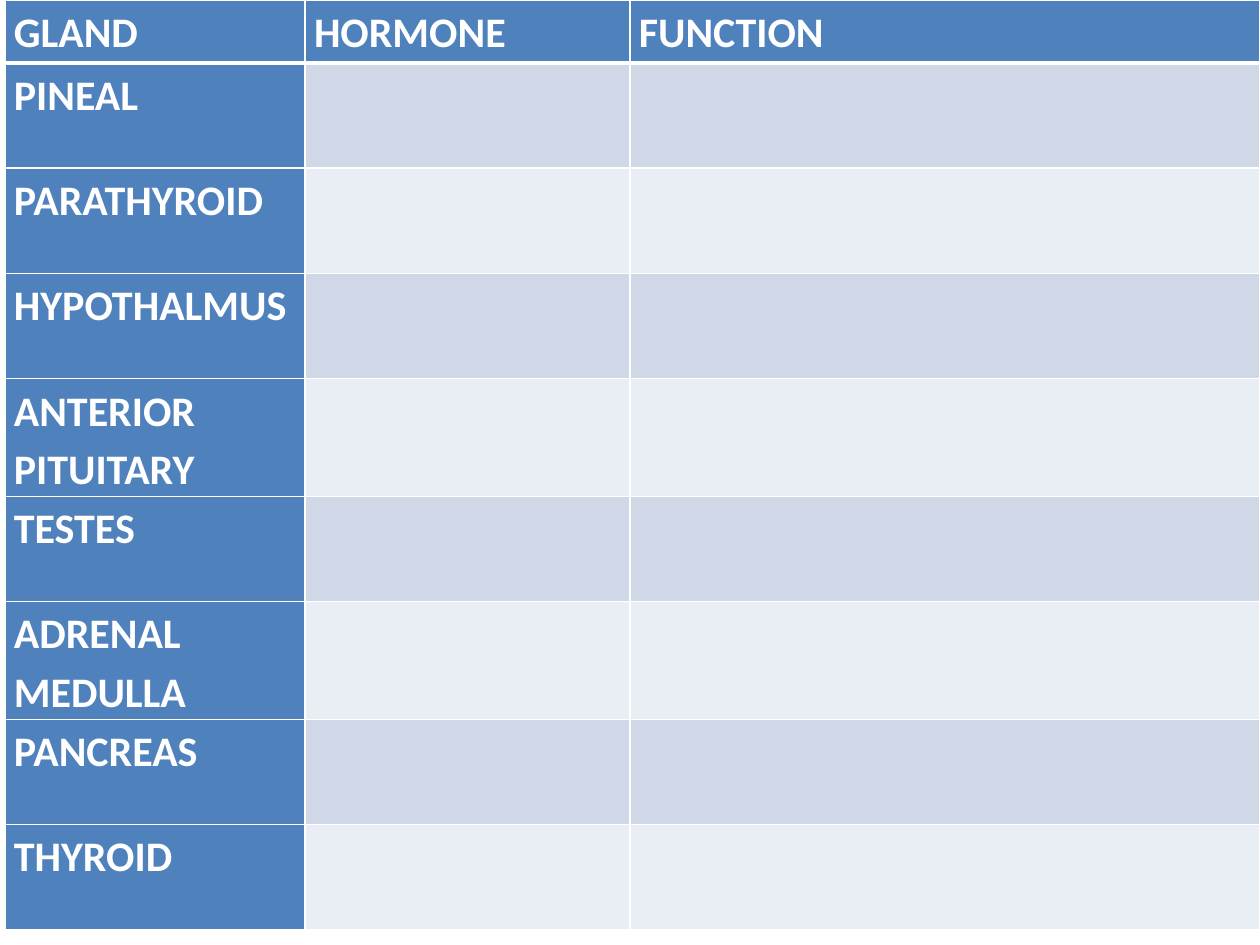
from dataclasses import dataclass

from lxml import etree
from pptx import Presentation
from pptx.dml.color import RGBColor
from pptx.oxml.ns import qn
from pptx.table import Table, _Cell
from pptx.util import Cm, Length, Pt


@dataclass(frozen=True)
class Theme:
    font: str = "Calibri"
    text_size: Length = Pt(24)
    line_spacing: float = 1.15
    label_text: str = "FFFFFF"
    label_fill: str = "4F81BD"
    bands: tuple[str, str] = ("D0D8E8", "E9EDF4")
    border: str = "FFFFFF"
    thin: Length = Pt(1)
    thick: Length = Pt(3)


@dataclass(frozen=True)
class Column:
    heading: str
    width: Length


THEME = Theme()
COLUMNS = (
    Column("GLAND", Cm(6.05)),
    Column("HORMONE", Cm(6.55)),
    Column("FUNCTION", Cm(12.7)),
)
GLANDS = (
    "PINEAL", "PARATHYROID", "HYPOTHALMUS", "ANTERIOR PITUITARY",
    "TESTES", "ADRENAL MEDULLA", "PANCREAS", "THYROID",
)
HEADING_HEIGHT = Cm(1.27)
GLAND_HEIGHT = Cm(2.12)
SIDE_MARGIN = Cm(0.18)
TABLE_LEFT = Cm(0.1)


def fill_cell(cell: _Cell, color: str) -> None:
    cell.fill.solid()
    cell.fill.fore_color.rgb = RGBColor.from_string(color)


def set_borders(cell: _Cell, top: Length, bottom: Length) -> None:
    """Draw the four sides; border elements come before the fill."""
    properties = cell._tc.get_or_add_tcPr()
    sides = (("a:lnL", THEME.thin), ("a:lnR", THEME.thin),
             ("a:lnT", top), ("a:lnB", bottom))
    for position, (tag, width) in enumerate(sides):
        line = etree.Element(qn(tag), w=str(int(width)))
        solid = etree.SubElement(line, qn("a:solidFill"))
        etree.SubElement(solid, qn("a:srgbClr"), val=THEME.border)
        properties.insert(position, line)


def write_label(cell: _Cell, text: str) -> None:
    cell.text = text
    cell.margin_left = cell.margin_right = SIDE_MARGIN
    cell.margin_top = cell.margin_bottom = 0
    paragraph = cell.text_frame.paragraphs[0]
    paragraph.line_spacing = THEME.line_spacing
    paragraph.font.name = THEME.font
    paragraph.font.size = THEME.text_size
    paragraph.font.bold = True
    paragraph.font.color.rgb = RGBColor.from_string(THEME.label_text)


def fill_gland_table(table: Table) -> None:
    # Column widths and headings
    for index, column in enumerate(COLUMNS):
        table.columns[index].width = column.width
        heading = table.cell(0, index)
        write_label(heading, column.heading)
        fill_cell(heading, THEME.label_fill)
        set_borders(heading, THEME.thin, THEME.thick)
    table.rows[0].height = HEADING_HEIGHT

    # One banded row per gland, with answers left open
    for row, gland in enumerate(GLANDS, start=1):
        table.rows[row].height = GLAND_HEIGHT
        write_label(table.cell(row, 0), gland)
        band = THEME.bands[(row - 1) % 2]
        top = THEME.thick if row == 1 else THEME.thin
        for index in range(len(COLUMNS)):
            cell = table.cell(row, index)
            fill_cell(cell, THEME.label_fill if index == 0 else band)
            set_borders(cell, top, THEME.thin)


def main() -> None:
    presentation = Presentation()
    presentation.slide_width = Cm(25.4)
    presentation.slide_height = Cm(19.05)
    slide = presentation.slides.add_slide(presentation.slide_layouts[6])

    # Gland worksheet
    frame = slide.shapes.add_table(
        len(GLANDS) + 1, len(COLUMNS), TABLE_LEFT, 0,
        sum(column.width for column in COLUMNS),
        HEADING_HEIGHT + GLAND_HEIGHT * len(GLANDS),
    )
    frame.table.first_col = True
    fill_gland_table(frame.table)

    presentation.save("out.pptx")


if __name__ == "__main__":
    main()
